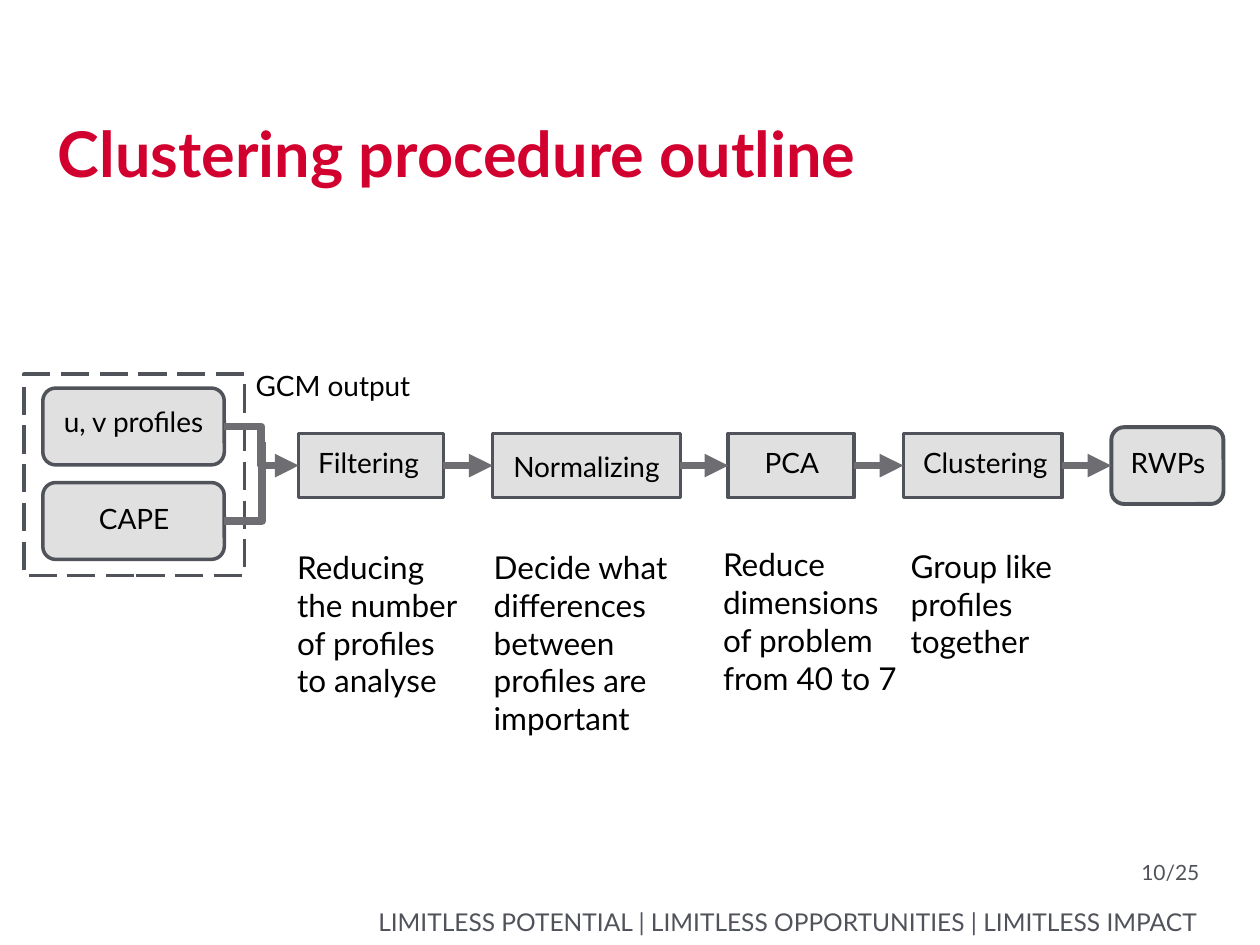
from pptx import Presentation
from pptx.dml.color import RGBColor
from pptx.enum.dml import MSO_LINE as Dash
from pptx.enum.shapes import MSO_CONNECTOR as Con, MSO_SHAPE as Kind
from pptx.enum.text import MSO_ANCHOR as Anchor, MSO_AUTO_SIZE as Auto, PP_ALIGN as Align
from pptx.oxml.ns import qn
from pptx.util import Inches, Pt
from lxml.etree import SubElement

COLS, ROWS = 100, 75
RED, DARK, GREY, PALE = "D2002E", "50535A", "6E6E72", "E0E0E1"
RIGHT, LEFT = 3, 1


def paint(hue):
    """Turn a hex string into a colour."""
    return RGBColor.from_string(hue)


class Board:
    """Style and current slide, measured in columns and rows."""

    def __init__(self, deck):
        self.font = "Lato"
        self.slide = deck.slides.add_slide(deck.slide_layouts[6])
        self.col = deck.slide_width / COLS
        self.row = deck.slide_height / ROWS

    def place(self, x, y, w, h):
        """Turn grid units into slide lengths."""
        return [round(n * unit) for n, unit in
                ((x, self.col), (y, self.row), (w, self.col), (h, self.row))]

    def text(self, words, at, size, hue="000000", align=Align.LEFT,
             bold=False, flush=False, wrap=True, grow=True, anchor=Anchor.TOP):
        """Add a text box with one run."""
        frame = self.slide.shapes.add_textbox(*self.place(*at)).text_frame
        frame.word_wrap = wrap
        frame.auto_size = Auto.SHAPE_TO_FIT_TEXT if grow else Auto.NONE
        frame.vertical_anchor = anchor
        if flush:
            frame.margin_left = frame.margin_right = 0
            frame.margin_top = frame.margin_bottom = 0
        para = frame.paragraphs[0]
        para.alignment = align
        run = para.add_run()
        run.text = words
        font = run.font
        font.name, font.size, font.bold = self.font, Pt(size), bold
        font.color.rgb = paint(hue)

    def box(self, kind, at, fill=PALE, width=2, dash=None):
        """Add an outlined box."""
        shape = self.slide.shapes.add_shape(kind, *self.place(*at))
        shape.shadow.inherit = False
        shape.fill.solid()
        shape.fill.fore_color.rgb = paint(fill)
        shape.line.color.rgb = paint(DARK)
        shape.line.width = Pt(width)
        if dash:
            shape.line.dash_style = dash
        return shape

    def link(self, start, end=None, kind=Con.STRAIGHT, stop=(0, 0)):
        """Add an arrow between boxes, or a bent line to a bare point."""
        x, y, _, _ = self.place(*stop, 0, 0)
        line = self.slide.shapes.add_connector(kind, x, y, x, y)
        line.begin_connect(start, RIGHT)
        line.line.color.rgb = paint(GREY)
        line.line.width = Pt(4.5)
        props = line._element.spPr
        if end:
            line.end_connect(end, LEFT)
            SubElement(props.find(qn("a:ln")), qn("a:tailEnd"), type="triangle")
        else:
            props.find(qn("a:prstGeom")).set("prst", "bentConnector2")
        SubElement(props, qn("a:effectLst"))


def main():
    """Build the slide."""
    deck = Presentation()
    deck.slide_width, deck.slide_height = Inches(10), Inches(7.5)
    board = Board(deck)

    board.text("LIMITLESS POTENTIAL\u2002|\u2002LIMITLESS OPPORTUNITIES\u2002|\u2002LIMITLESS IMPACT"
               .replace("\u2002", " "), (21.1, 71.9, 74, 2.4), 14, DARK,
               Align.RIGHT, flush=True, anchor=Anchor.BOTTOM)
    board.text("Clustering procedure outline", (4.6, 8.4, 90.6, 6.7), 36, RED,
               bold=True, flush=True, wrap=False, grow=False, anchor=Anchor.BOTTOM)

    notes = [
        ("Reducing the number of profiles to analyse", (22.6, 43, 15.7, 13.1)),
        ("Decide what differences between profiles are important", (38.2, 43, 16.6, 16.2)),
        ("Reduce dimensions of problem from 40 to 7", (56.4, 42.8, 16.6, 13.1)),
        ("Group like profiles together", (71.3, 42.9, 16.6, 10.1)),
    ]
    for words, at in notes:
        board.text(words, at, 18)

    board.box(Kind.RECTANGLE, (1.9, 29.7, 17.5, 16), "FFFFFF", dash=Dash.LONG_DASH)
    wind, cape = [board.box(Kind.ROUNDED_RECTANGLE, (3.4, y, 14.4, 6.1))
                  for y in (30.8, 38.3)]
    steps = [board.box(Kind.RECTANGLE, (x, 34.4, w, 5.1))
             for x, w in ((23.7, 11.5), (39.1, 14.9), (57.8, 10), (71.7, 12.6))]
    steps.append(board.box(Kind.ROUNDED_RECTANGLE, (88.2, 33.9, 8.9, 6.1), width=2.25))

    labels = [
        ("u, v profiles", 3.4, 31.6, 14.4), ("CAPE", 5.7, 39.3, 9.9),
        ("Filtering", 23.5, 34.9, 11.5), ("Normalizing", 39.7, 35.2, 13.7),
        ("PCA", 59.3, 34.9, 7.1), ("Clustering", 71.8, 34.9, 12.8),
        ("RWPs", 88.3, 34.9, 8.8),
    ]
    for words, x, y, w in labels:
        board.text(words, (x, y, w, 3.7), 16, align=Align.CENTER)
    board.text("GCM output", (19.3, 28.8, 15.9, 3.7), 16)

    board.link(wind, steps[0], Con.ELBOW)
    board.link(cape, kind=Con.ELBOW, stop=(20.8, 35.1))
    for start, end in zip(steps, steps[1:]):
        board.link(start, end)

    board.text("10/25", (87.8, 68.2, 7.4, 2.8), 12, DARK, Align.RIGHT,
               flush=True, grow=False)
    deck.save("out.pptx")


if __name__ == "__main__":
    main()
